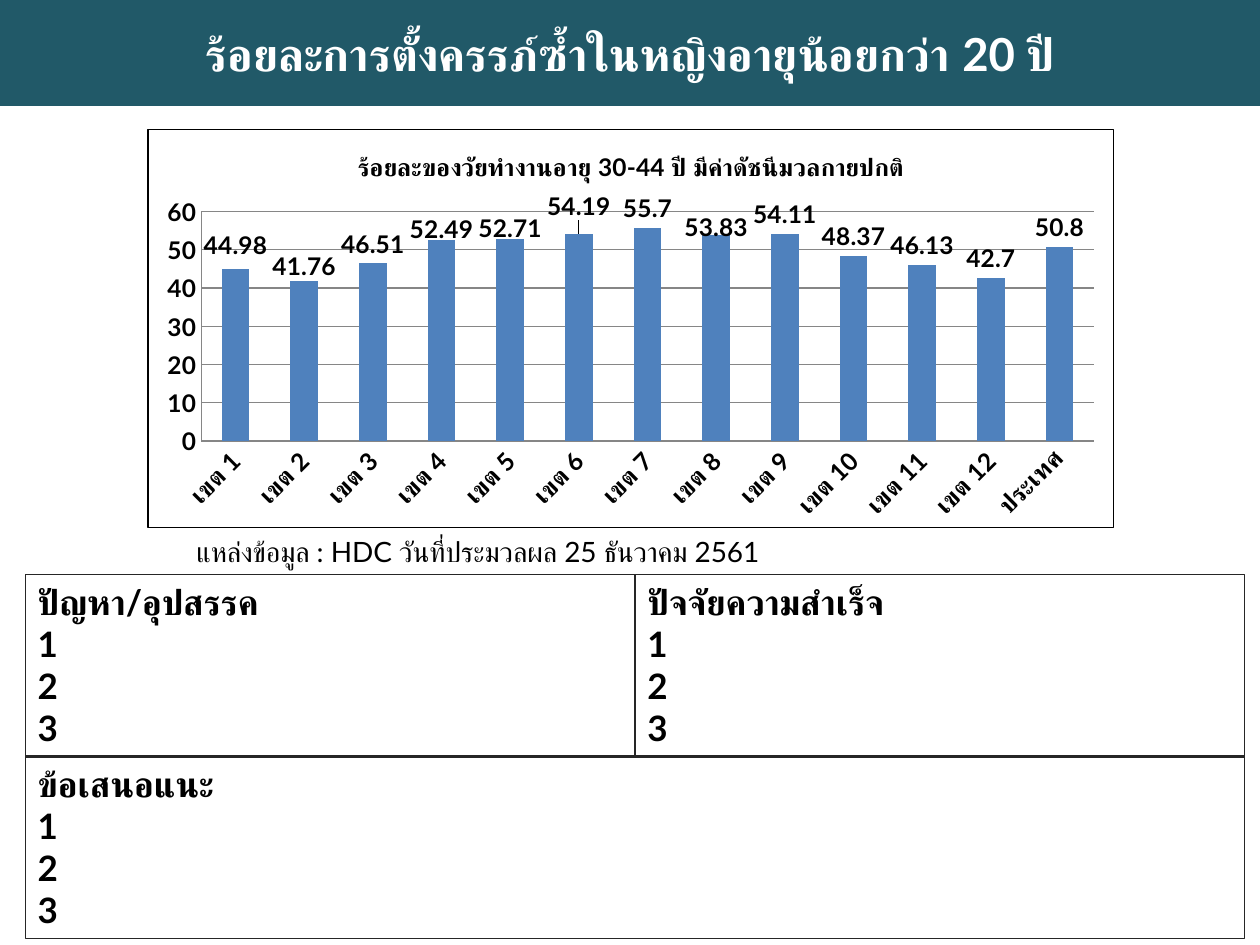
from lxml import etree
from pptx import Presentation
from pptx.chart.data import CategoryChartData
from pptx.dml.color import RGBColor
from pptx.enum.chart import XL_CHART_TYPE, XL_LABEL_POSITION, XL_TICK_MARK
from pptx.enum.shapes import MSO_SHAPE
from pptx.enum.text import MSO_ANCHOR, PP_ALIGN
from pptx.oxml import parse_xml
from pptx.oxml.ns import nsdecls, qn
from pptx.util import Inches, Pt

COLUMNS = XL_CHART_TYPE.COLUMN_CLUSTERED
OUTSIDE_END = XL_LABEL_POSITION.OUTSIDE_END
NO_TICK = XL_TICK_MARK.NONE
RECTANGLE = MSO_SHAPE.RECTANGLE
TOP, MIDDLE = MSO_ANCHOR.TOP, MSO_ANCHOR.MIDDLE
LEFT, CENTER = PP_ALIGN.LEFT, PP_ALIGN.CENTER


def rgb(color):
    return RGBColor.from_string(color)


def set_font(font, size, bold=True, color="000000"):
    font.name = "Lato"
    font.size = Pt(size)
    font.bold = bold
    font.color.rgb = rgb(color)


prs = Presentation()
prs.slide_width, prs.slide_height = Inches(10), Inches(7.5)
slide = prs.slides.add_slide(prs.slide_layouts[5])

# Title band
title = slide.shapes.title
title.left, title.top = Inches(0), Inches(0)
title.width, title.height = Inches(10), Inches(0.84)
title.fill.solid()
title.fill.fore_color.rgb = rgb("215968")
title.text_frame.text = "ร้อยละการตั้งครรภ์ซ้ำในหญิงอายุน้อยกว่า 20 ปี"
title.text_frame.vertical_anchor = MIDDLE
heading = title.text_frame.paragraphs[0]
heading.alignment = CENTER
set_font(heading.font, 26, color="FFFFFF")

# Note boxes
notes = [
    ("ปัญหา/อุปสรรค", 0.2, 4.56, 4.84),
    ("ปัจจัยความสำเร็จ", 5.04, 4.56, 4.84),
    ("ข้อเสนอแนะ", 0.2, 6, 9.68),
]
for topic, left, top, width in notes:
    box = slide.shapes.add_shape(
        RECTANGLE, Inches(left), Inches(top), Inches(width), Inches(1.45))
    box.shadow.inherit = False
    box.fill.background()
    box.line.color.rgb = rgb("262626")
    box.line.width = Pt(0.75)
    box.text_frame.word_wrap = True
    box.text_frame.vertical_anchor = TOP
    box.text_frame.text = "\n".join([topic, "1", "2", "3"])
    for line in box.text_frame.paragraphs:
        line.alignment = LEFT
        set_font(line.font, 20)

# Data source
source = slide.shapes.add_textbox(
    Inches(1.46), Inches(4.19), Inches(4.8), Inches(0.37)).text_frame
source.word_wrap = True
source.text = "แหล่งข้อมูล : HDC วันที่ประมวลผล 25 ธันวาคม 2561"
set_font(source.paragraphs[0].font, 16, bold=False)

# Column chart
chart_data = CategoryChartData()
chart_data.categories = [f"เขต {n}" for n in range(1, 13)] + ["ประเทศ"]
chart_data.add_series("Series 1", [
    44.98, 41.76, 46.51, 52.49, 52.71, 54.19, 55.7,
    53.83, 54.11, 48.37, 46.13, 42.7, 50.8])
chart = slide.shapes.add_chart(
    COLUMNS, Inches(1.17), Inches(1.02), Inches(7.67), Inches(3.17),
    chart_data).chart
set_font(chart.font, 14)
chart.has_legend = False
chart.has_title = True
chart.chart_title.include_in_layout = False
chart.chart_title.text_frame.text = (
    "ร้อยละของวัยทำงานอายุ 30-44 ปี มีค่าดัชนีมวลกายปกติ")
set_font(chart.chart_title.text_frame.paragraphs[0].font, 14)

values, zones = chart.value_axis, chart.category_axis
values.minimum_scale, values.maximum_scale, values.major_unit = 0, 60, 10
values.has_major_gridlines = True
for axis in (values, zones):
    axis.major_tick_mark = axis.minor_tick_mark = NO_TICK
    axis.format.line.color.rgb = rgb("868686")
    set_font(axis.tick_labels.font, 14)
values.major_gridlines.format.line.color.rgb = rgb("868686")
zones._element.find(qn("c:txPr")).find(qn("a:bodyPr")).set("rot", "-2700000")

plot = chart.plots[0]
plot.vary_by_categories = False
plot.gap_width = 150
columns = plot.series[0]
columns.format.fill.solid()
columns.format.fill.fore_color.rgb = rgb("4F81BD")
labels = columns.data_labels
labels.show_value = True
labels.position = OUTSIDE_END
set_font(labels.font, 14)

# Labels nudged vertically, as a fraction of the chart height
nudges = {0: -0.01, 1: 0.01, 3: 0.02, 4: 0.02, 5: -0.02, 7: 0.03}
for index, shift in nudges.items():
    label = columns.points[index].data_label
    set_font(label.font, 14)
    label.position = OUTSIDE_END
for label in labels._element.findall(qn("c:dLbl")):
    idx = label.find(qn("c:idx"))
    layout = etree.Element(qn("c:layout"))
    manual = etree.SubElement(layout, qn("c:manualLayout"))
    etree.SubElement(manual, qn("c:x")).set("val", "0")
    etree.SubElement(manual, qn("c:y")).set(
        "val", str(nudges[int(idx.get("val"))]))
    idx.addnext(layout)

# Chart border
chart._chartSpace.find(qn("c:chart")).addnext(parse_xml(
    f'<c:spPr {nsdecls("c", "a")}><a:noFill/><a:ln w="9525"><a:solidFill>'
    '<a:srgbClr val="000000"/></a:solidFill></a:ln></c:spPr>'))

prs.save("out.pptx")
